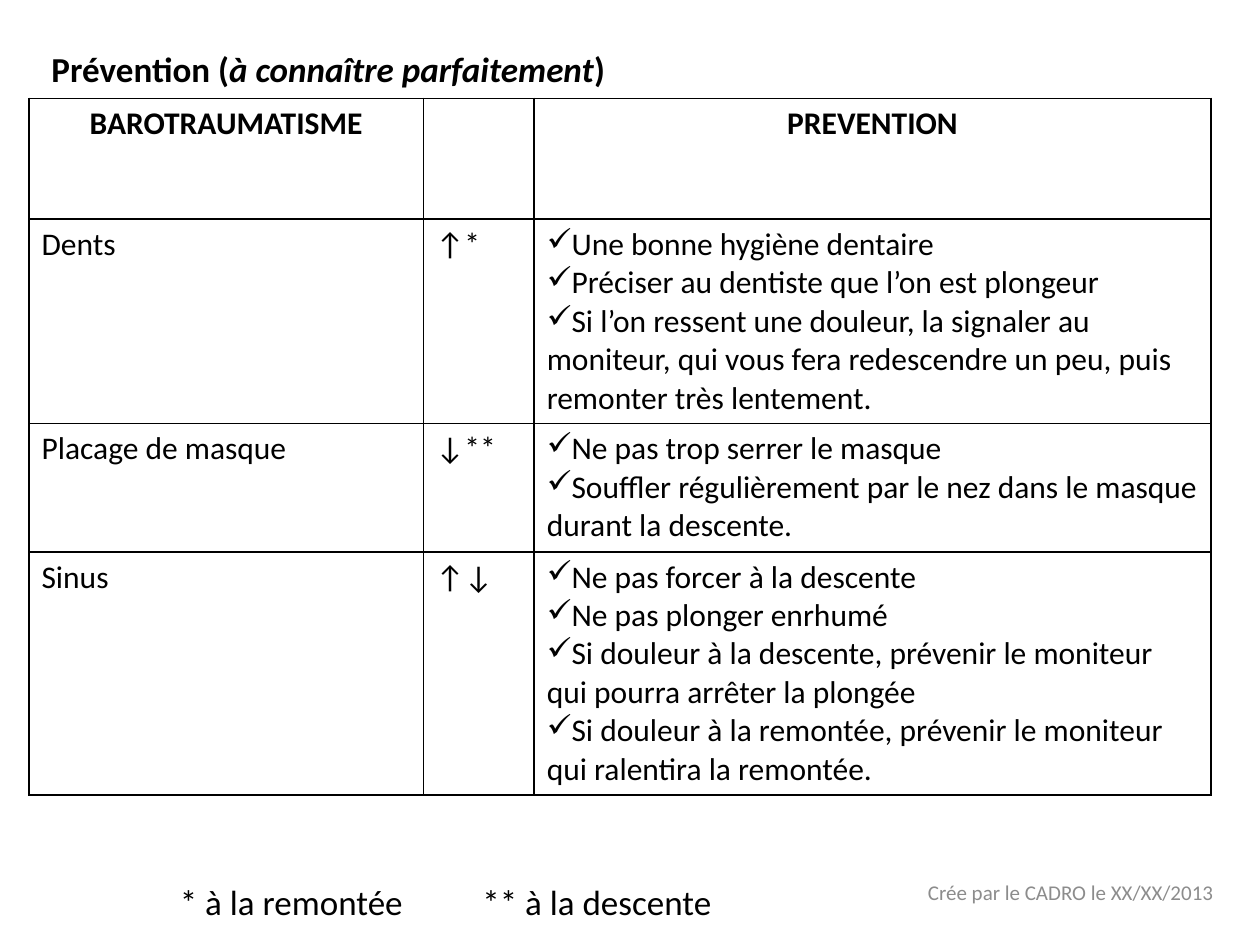
from lxml import etree
from pptx import Presentation
from pptx import util as u
from pptx.dml.color import RGBColor
from pptx.enum import text
from pptx.oxml.ns import qn

TITLE = [("Prévention (", False), ("à connaître parfaitement", True), (")", False)]
HEADINGS = ["BAROTRAUMATISME", "", "PREVENTION"]
INJURIES = [
    ("Dents", "↑*", [
        "Une bonne hygiène dentaire",
        "Préciser au dentiste que l’on est plongeur",
        "Si l’on ressent une douleur, la signaler au moniteur, qui vous fera "
        "redescendre un peu, puis remonter très lentement."]),
    ("Placage de masque", "↓**", [
        "Ne pas trop serrer le masque",
        "Souffler régulièrement par le nez dans le masque durant la descente."]),
    ("Sinus", "↑↓", [
        "Ne pas forcer à la descente",
        "Ne pas plonger enrhumé",
        "Si douleur à la descente, prévenir le moniteur qui pourra arrêter la plongée",
        "Si douleur à la remontée, prévenir le moniteur qui ralentira la remontée."]),
]
LEGEND = [("* à la remontée", 1.33), ("** à la descente", 3.73)]
CREDIT = "Crée par le CADRO le XX/XX/2013"
COLUMNS = [3.13, 0.88, 5.37]
ROWS = [0.96, 1.62, 1.02, 1.93]
BLACK, WHITE, GREY = "000000", "FFFFFF", "8C8C8C"


def color(value):
    return RGBColor.from_string(value)


def style(paragraph, size, ink=BLACK, bold=False):
    font = paragraph.font
    font.name, font.size, font.bold = "Calibri", u.Pt(size), bold
    font.color.rgb = color(ink)


def add_line(slide, left, top, width, runs, size, **look):
    frame = slide.shapes.add_textbox(
        u.Inches(left), u.Inches(top), u.Inches(width), u.Inches(0.4)).text_frame
    frame.word_wrap = True
    line = frame.paragraphs[0]
    for words, italic in runs:
        run = line.add_run()
        run.text = words
        if italic:
            run.font.italic = True
    style(line, size, **look)
    return frame


def add_check(paragraph):
    props = paragraph._p.get_or_add_pPr()
    props.set("marL", "0")
    props.set("indent", "0")
    etree.SubElement(props, qn("a:buChar")).set("char", "✓")


def add_borders(cell):
    props = cell._tc.get_or_add_tcPr()
    for position, side in enumerate(("lnL", "lnR", "lnT", "lnB")):
        border = etree.Element(qn("a:" + side), w=str(u.Pt(1)))
        fill = etree.SubElement(border, qn("a:solidFill"))
        etree.SubElement(fill, qn("a:srgbClr")).set("val", BLACK)
        props.insert(position, border)


def fill_cell(cell, lines, heading=False, checked=False):
    cell.fill.solid()
    cell.fill.fore_color.rgb = color(WHITE)
    add_borders(cell)
    cell.text = "\n".join(lines)
    for paragraph in cell.text_frame.paragraphs:
        style(paragraph, 18, bold=heading)
        if heading:
            paragraph.alignment = text.PP_ALIGN.CENTER
        if checked:
            add_check(paragraph)


def main():
    prs = Presentation()
    prs.slide_width, prs.slide_height = u.Inches(10), u.Inches(7.5)
    slide = prs.slides.add_slide(prs.slide_layouts[6])

    # Title, legend of the arrows, credit
    add_line(slide, 0.31, 0.33, 9.45, TITLE, 20, bold=True)
    for words, left in LEGEND:
        add_line(slide, left, 6.94, 2.3, [(words, False)], 20)
    credit = add_line(slide, 6.56, 6.88, 3.17, [(CREDIT, False)], 12, ink=GREY)
    credit.vertical_anchor = text.MSO_ANCHOR.MIDDLE
    credit.paragraphs[0].alignment = text.PP_ALIGN.RIGHT

    # Prevention table
    table = slide.shapes.add_table(
        len(ROWS), len(COLUMNS), u.Inches(0.23), u.Inches(0.78),
        u.Inches(sum(COLUMNS)), u.Inches(sum(ROWS))).table
    for column, width in zip(table.columns, COLUMNS):
        column.width = u.Inches(width)
    for row, height in zip(table.rows, ROWS):
        row.height = u.Inches(height)
    for c, heading in enumerate(HEADINGS):
        fill_cell(table.cell(0, c), [heading], heading=True)
    for r, (injury, phase, advice) in enumerate(INJURIES, 1):
        fill_cell(table.cell(r, 0), [injury])
        fill_cell(table.cell(r, 1), [phase])
        fill_cell(table.cell(r, 2), advice, checked=True)

    prs.save("out.pptx")


if __name__ == "__main__":
    main()
